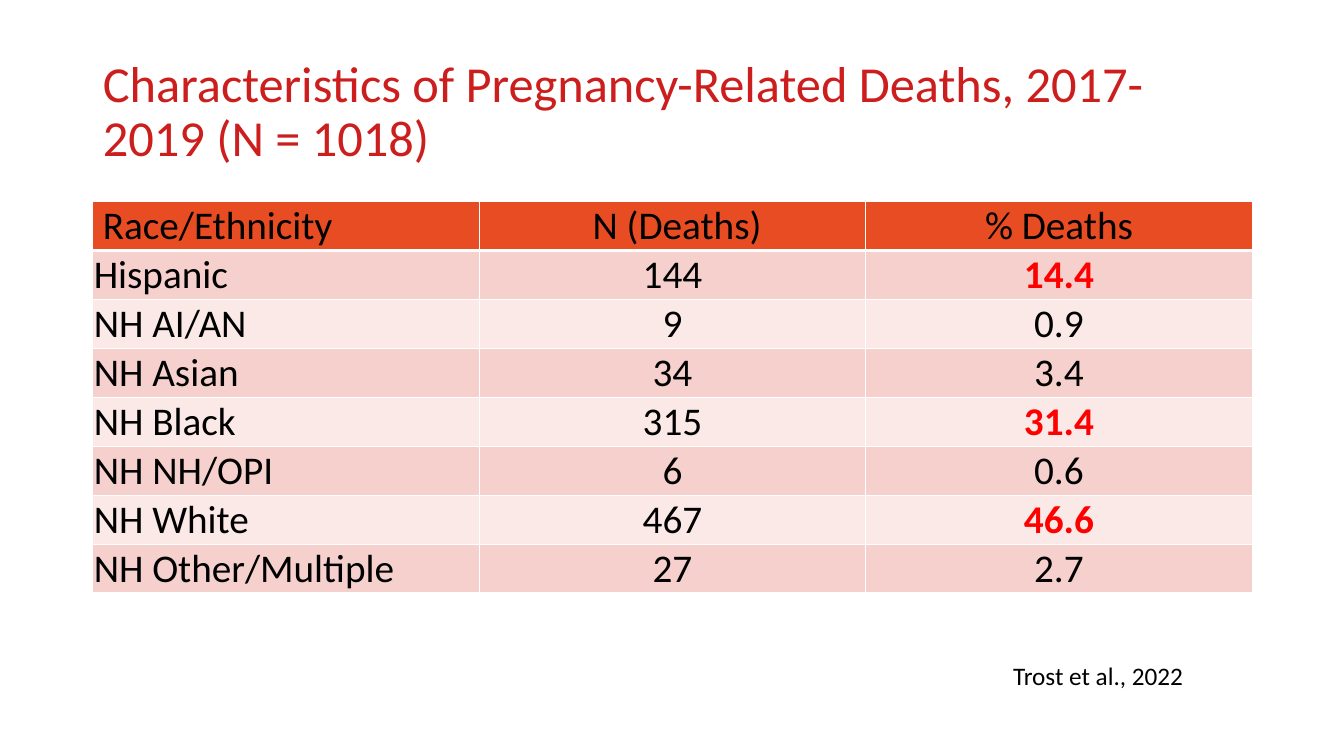
from dataclasses import dataclass

from lxml import etree
from pptx import Presentation
from pptx import util as u
from pptx.dml.color import RGBColor
from pptx.enum import text
from pptx.oxml.ns import qn


@dataclass(frozen=True)
class Theme:
    font: str = "Calibri"
    title: str = "CC1E1D"
    ink: str = "000000"
    alert: str = "FF0000"
    header: str = "E84C22"
    bands: tuple[str, str] = ("F6D0CD", "FBE9E8")
    border: str = "FFFFFF"
    title_pt: int = 36
    table_pt: int = 28
    source_pt: int = 18


@dataclass(frozen=True)
class DeathRow:
    group: str
    deaths: str
    percent: str
    highlight: bool = False


THEME = Theme()
HEADER = DeathRow("Race/Ethnicity", "N (Deaths)", "% Deaths")
ROWS = [
    DeathRow("Hispanic", "144", "14.4", True),
    DeathRow("NH AI/AN", "9", "0.9"),
    DeathRow("NH Asian", "34", "3.4"),
    DeathRow("NH Black", "315", "31.4", True),
    DeathRow("NH NH/OPI", "6", "0.6"),
    DeathRow("NH White", "467", "46.6", True),
    DeathRow("NH Other/Multiple", "27", "2.7"),
]
LEFT, WIDTH = 0.92, 11.5
ROW_HEIGHT = 0.48


def add_run(p, words: str, size: int, color: str, bold: bool = False) -> None:
    r = p.add_run()
    r.text = words
    r.font.name = THEME.font
    r.font.size = u.Pt(size)
    r.font.bold = bold
    r.font.color.rgb = RGBColor.from_string(color)


def set_borders(cell, bottom_pt: float) -> None:
    """Border lines come before the fill in the cell properties."""
    tc_pr = cell._tc.get_or_add_tcPr()
    for i, (side, width) in enumerate(
        [("lnL", 1), ("lnR", 1), ("lnT", 1), ("lnB", bottom_pt)]
    ):
        ln = etree.Element(qn(f"a:{side}"), w=str(u.Pt(width)))
        fill = etree.SubElement(ln, qn("a:solidFill"))
        etree.SubElement(fill, qn("a:srgbClr"), val=THEME.border)
        tc_pr.insert(i, ln)


def fill_row(table, index: int, row: DeathRow) -> None:
    is_header = index == 0
    fill = THEME.header if is_header else THEME.bands[(index - 1) % 2]
    for col, words in enumerate((row.group, row.deaths, row.percent)):
        cell = table.cell(index, col)
        cell.fill.solid()
        cell.fill.fore_color.rgb = RGBColor.from_string(fill)
        cell.vertical_anchor = text.MSO_ANCHOR.MIDDLE
        cell.margin_left = u.Inches(0.1 if is_header and col < 2 else 0.01)
        cell.margin_right = cell.margin_top = u.Inches(0.01)
        cell.margin_bottom = 0
        set_borders(cell, 3 if is_header else 1)
        p = cell.text_frame.paragraphs[0]
        p.alignment = text.PP_ALIGN.CENTER if col else text.PP_ALIGN.LEFT
        marked = row.highlight and col == 2
        add_run(p, words, THEME.table_pt, THEME.alert if marked else THEME.ink, marked)


def add_title(s, words: str) -> None:
    title = s.shapes.title
    title.left, title.top = u.Inches(LEFT), u.Inches(0.4)
    title.width, title.height = u.Inches(WIDTH), u.Inches(1.45)
    tf = title.text_frame
    tf.word_wrap = True
    tf.auto_size = text.MSO_AUTO_SIZE.NONE
    tf.vertical_anchor = text.MSO_ANCHOR.MIDDLE
    p = tf.paragraphs[0]
    p.alignment = text.PP_ALIGN.LEFT
    p.line_spacing = 0.9
    add_run(p, words, THEME.title_pt, THEME.title)


def add_death_table(s) -> None:
    rows = [HEADER, *ROWS]
    table = s.shapes.add_table(
        len(rows), 3, u.Inches(LEFT), u.Inches(2),
        u.Inches(WIDTH), u.Inches(ROW_HEIGHT * len(rows)),
    ).table
    for index, row in enumerate(rows):
        table.rows[index].height = u.Inches(ROW_HEIGHT)
        fill_row(table, index, row)


def add_source(s, words: str) -> None:
    sp = s.shapes.add_textbox(u.Inches(9.95), u.Inches(6.5), u.Inches(2.47), u.Inches(0.4))
    tf = sp.text_frame
    tf.word_wrap = True
    tf.auto_size = text.MSO_AUTO_SIZE.SHAPE_TO_FIT_TEXT
    add_run(tf.paragraphs[0], words, THEME.source_pt, THEME.ink)


def main() -> None:
    prs = Presentation()
    prs.slide_width, prs.slide_height = u.Inches(13.33), u.Inches(7.5)
    s = prs.slides.add_slide(prs.slide_layouts[5])  # title only
    add_title(s, "Characteristics of Pregnancy-Related Deaths, 2017-2019 (N = 1018)")
    add_death_table(s)
    add_source(s, "Trost et al., 2022")
    prs.save("out.pptx")


if __name__ == "__main__":
    main()
